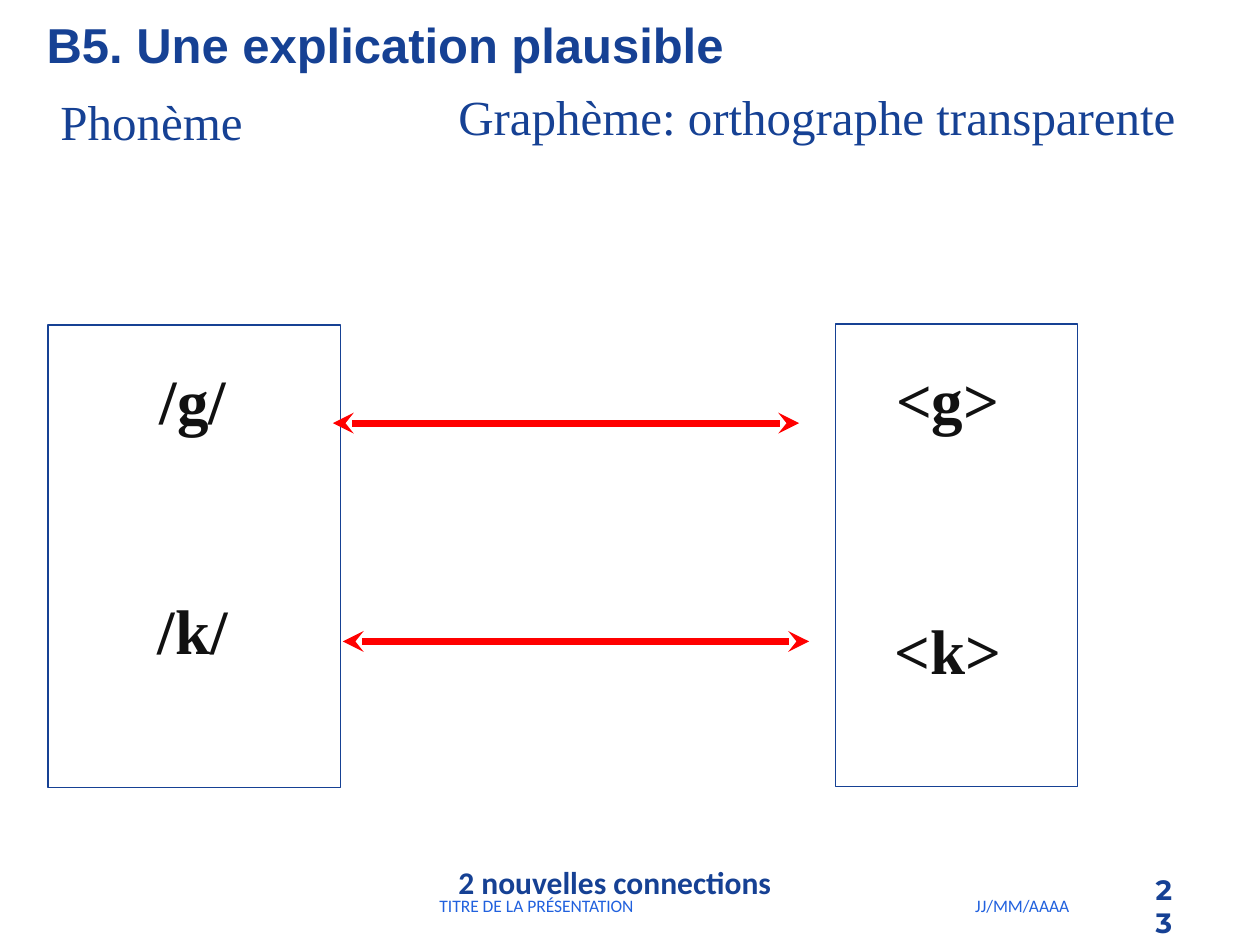
from dataclasses import dataclass

from lxml import etree
from pptx import Presentation
from pptx.dml.color import RGBColor
from pptx.enum.shapes import MSO_CONNECTOR, MSO_SHAPE
from pptx.enum.text import MSO_ANCHOR, PP_ALIGN
from pptx.oxml.ns import qn
from pptx.util import Cm, Pt

RECT = MSO_SHAPE.RECTANGLE
LINE = MSO_CONNECTOR.STRAIGHT
TOP, MID = MSO_ANCHOR.TOP, MSO_ANCHOR.MIDDLE
LEFT, CENTER, RIGHT = PP_ALIGN.LEFT, PP_ALIGN.CENTER, PP_ALIGN.RIGHT


@dataclass(frozen=True)
class Theme:
    """Colours, fonts and type sizes of the slide."""
    navy: str = "164194"
    blue: str = "2161DE"
    ink: str = "111111"
    red: str = "FF0000"
    white: str = "FFFFFF"
    serif: str = "Times New Roman"
    sans: str = "Arial"
    body: str = "Calibri"
    digit: str = "Montserrat"
    head: int = 28
    sound: int = 36
    note: int = 18
    page: int = 16
    small: int = 10


THEME = Theme()


def rgb(code):
    """Turn a hex code into a colour."""
    return RGBColor.from_string(code)


def put_text(slide, box, text, font=THEME.body, size=THEME.small, color=THEME.navy,
             bold=False, align=LEFT, anchor=TOP, fill=None, line=None,
             inset=(0.25, 0.13, 0.25, 0.13), gap=0, lead=None):
    """Place text in a box, one paragraph for each line."""
    place = [Cm(n) for n in box]
    if fill or line:
        shape = slide.shapes.add_shape(RECT, *place)
        shape.shadow.inherit = False
        if fill:
            shape.fill.solid()
            shape.fill.fore_color.rgb = rgb(fill)
        else:
            shape.fill.background()
        if line:
            shape.line.color.rgb = rgb(line)
            shape.line.width = Pt(0.75)
        else:
            shape.line.fill.background()
    else:
        shape = slide.shapes.add_textbox(*place)
    frame = shape.text_frame
    frame.word_wrap = True
    frame.vertical_anchor = anchor
    (frame.margin_left, frame.margin_top,
     frame.margin_right, frame.margin_bottom) = [Cm(n) for n in inset]
    frame.text = text
    for rank, para in enumerate(frame.paragraphs):
        para.alignment = align
        if rank:
            para.space_before = Pt(gap)
        if lead:
            para.line_spacing = lead
        face = para.runs[0].font
        face.name, face.size, face.bold = font, Pt(size), bold
        face.color.rgb = rgb(color)
    return shape


def put_arrow(slide, left, top, width):
    """Draw a level arrow with a head at both ends."""
    arrow = slide.shapes.add_connector(
        LINE, Cm(left), Cm(top), Cm(left + width), Cm(top))
    arrow.line.color.rgb = rgb(THEME.red)
    arrow.line.width = Pt(4)
    stroke = arrow.line._get_or_add_ln()
    for tag in ("a:headEnd", "a:tailEnd"):
        etree.SubElement(stroke, qn(tag), type="stealth")
    etree.SubElement(arrow._element.spPr, qn("a:effectLst"))


def add_head(slide, left, top, width):
    """Place the title and the two column names."""
    look = dict(size=THEME.head, fill=THEME.white, inset=(0.25, 0.2, 0.25, 0.1))
    for dx, dy, wide, name in (
            (0.28, 1.55, 6.17, "Phonème"),
            (8.3, 1.45, 16.4, "Graphème: orthographe transparente")):
        put_text(slide, (left + dx, top + dy, wide, 1.45), name,
                 font=THEME.serif, **look)
    put_text(slide, (left, top, width, 1.45), "B5. Une explication plausible",
             font=THEME.sans, bold=True, **look)


def add_links(slide, left, top, width, height):
    """Place the sounds, the letters and the arrows between them."""
    look = dict(font=THEME.serif, size=THEME.sound, color=THEME.ink, bold=True,
                align=CENTER, line=THEME.navy)
    put_text(slide, (left, top + 0.02, 5.89, height), "/g/\n/k/", gap=88,
             fill=THEME.white, inset=(0.25, 0.74, 0.3, 0.13), **look)
    put_text(slide, (left + width - 4.88, top, 4.88, height), "<g>\n<k>", gap=100,
             inset=(0.25, 0.74, 0.6, 0.13), **look)
    for dx, dy in ((5.74, 2), (5.94, 6.4)):
        put_arrow(slide, left + dx, top + dy, 9.4)


def add_foot(slide, left, top, width):
    """Place the footer line and the remark above it."""
    look = dict(color=THEME.blue, anchor=MID)
    put_text(slide, (left, top, 8, 1.02), "TITRE DE LA PRÉSENTATION", **look)
    put_text(slide, (left + 10.8, top, 3.23, 1.02), "JJ/MM/AAAA", **look)
    put_text(slide, (left + width - 0.97, top, 0.97, 1.02), "23", font=THEME.digit,
             size=THEME.page, bold=True, align=RIGHT, anchor=MID)
    put_text(slide, (left - 0.33, top - 0.4, 8.23, 0.94), "2 nouvelles connections",
             size=THEME.note, bold=True, align=CENTER, lead=0.9)


def main():
    """Build the slide and save it."""
    deck = Presentation()
    deck.slide_width, deck.slide_height = Cm(25.4), Cm(19.05)
    slide = deck.slides.add_slide(deck.slide_layouts[6])
    add_head(slide, 0.69, 0.1, 24.92)
    add_links(slide, 0.97, 6.53, 20.75, 9.32)
    add_foot(slide, 8.61, 17.75, 15.27)
    deck.save("out.pptx")


if __name__ == "__main__":
    main()
